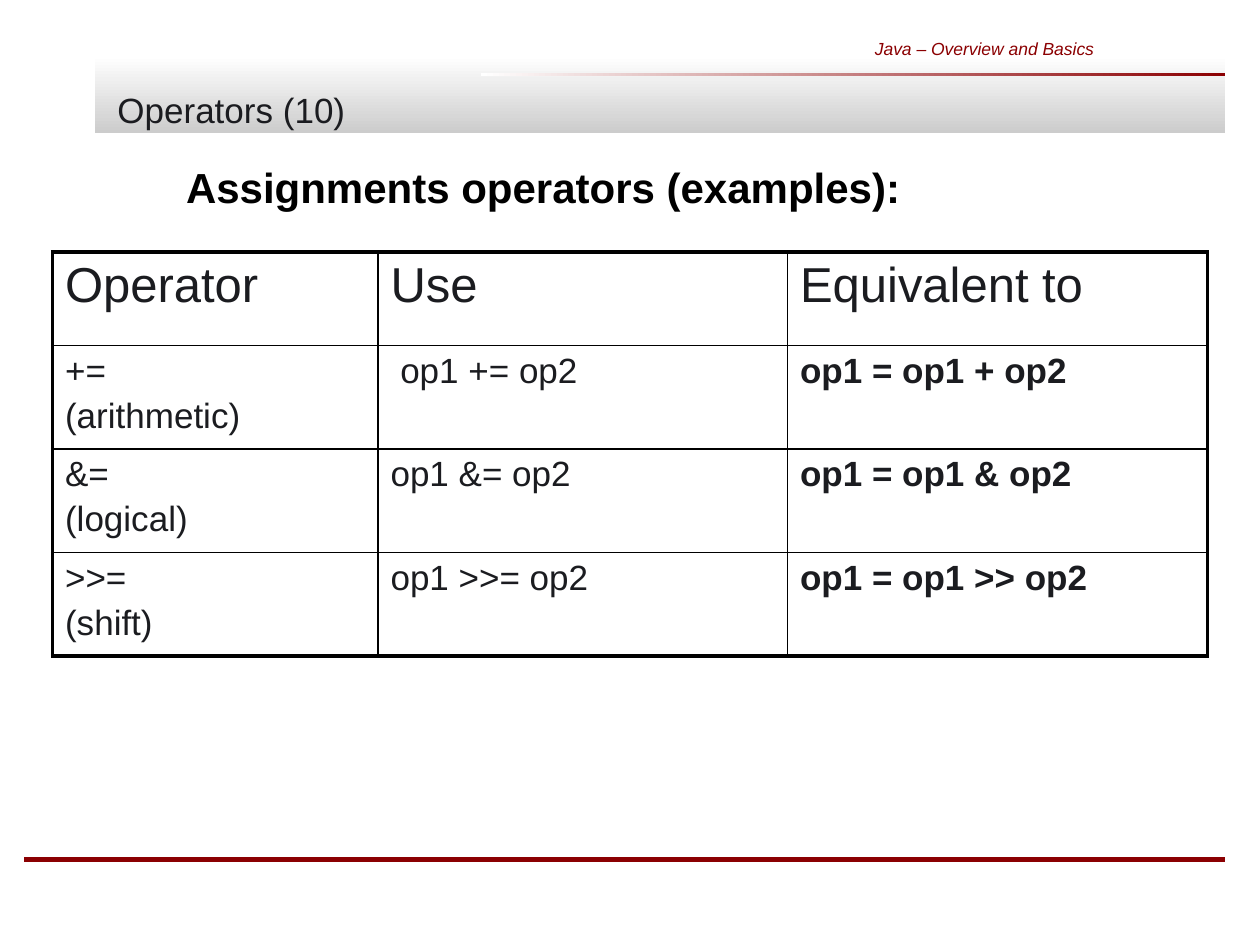
import pptx
import pptx.dml.color
import pptx.enum.shapes
import pptx.enum.text
import pptx.oxml
import pptx.oxml.ns
import pptx.util

Pt = pptx.util.Pt
RGBColor = pptx.dml.color.RGBColor
Align = pptx.enum.text.PP_ALIGN
Anchor = pptx.enum.text.MSO_ANCHOR

WHITE = RGBColor(0xFF, 0xFF, 0xFF)
SILVER = RGBColor(0xCC, 0xCC, 0xCC)
MAROON = RGBColor(0x8B, 0x00, 0x02)
INK = RGBColor(0x1B, 0x1C, 0x20)
BLACK = RGBColor(0, 0, 0)

OPERATORS = [
    ("Operator", "Use", "Equivalent to"),
    ("+=\n(arithmetic)", " op1 += op2", "op1 = op1 + op2"),
    ("&=\n(logical)", "op1 &= op2", "op1 = op1 & op2"),
    (">>=\n(shift)", "op1 >>= op2", "op1 = op1 >> op2"),
]
COLUMN_WIDTHS = (186, 234, 240)
HEADER_HEIGHT = 53.3
BODY_HEIGHT = 59.2
OUTER_BORDER = 2.25
INNER_BORDER = 1


def write_text(frame, text, size=20, color=INK, bold=False, italic=False,
               align=Align.LEFT, anchor=Anchor.TOP, gap=0, shadow=False):
    frame.word_wrap = True
    frame.vertical_anchor = anchor
    for index, line in enumerate(text.split("\n")):
        paragraph = frame.paragraphs[0] if index == 0 else frame.add_paragraph()
        paragraph.alignment = align
        if index:
            paragraph.space_before = Pt(gap)
        run = paragraph.add_run()
        run.text = line
        font = run.font
        font.name = "Arial"
        font.size = Pt(size)
        font.bold = bold
        font.italic = italic
        font.color.rgb = color
        if shadow:
            fill = run._r.rPr.find(pptx.oxml.ns.qn("a:solidFill"))
            fill.addnext(pptx.oxml.parse_xml(
                f'<a:effectLst {pptx.oxml.ns.nsdecls("a")}>'
                '<a:outerShdw dist="35921" dir="2700000" algn="ctr">'
                f'<a:srgbClr val="{WHITE}"/></a:outerShdw></a:effectLst>'))


def add_label(slide, left, top, width, height, text, **style):
    label = slide.shapes.add_textbox(Pt(left), Pt(top), Pt(width), Pt(height))
    write_text(label.text_frame, text, **style)


def add_gradient_bar(slide, left, top, width, height, end_color, angle):
    bar = slide.shapes.add_shape(pptx.enum.shapes.MSO_SHAPE.RECTANGLE,
                                 Pt(left), Pt(top), Pt(width), Pt(height))
    bar.shadow.inherit = False
    bar.line.fill.background()
    bar.fill.gradient()
    bar.fill.gradient_angle = angle
    for stop, color in zip(bar.fill.gradient_stops, (WHITE, end_color)):
        stop.color.rgb = color


def add_header(slide, left, top, width, height):
    add_gradient_bar(slide, left, top, width, height, SILVER, 270)
    add_gradient_bar(slide, left + 221, top + 10, width - 221, 1.6, MAROON, 0)
    add_label(slide, left + 368.6, top - 18, 209.5, 28, "Java – Overview and Basics",
              size=10, color=MAROON, italic=True, align=Align.RIGHT, anchor=Anchor.MIDDLE)
    add_label(slide, left + 6, top - 13.7, 660, 59.8, "Operators (10)",
              anchor=Anchor.BOTTOM, shadow=True)


def add_footer_rule(slide, left, top, width):
    rule = slide.shapes.add_connector(pptx.enum.shapes.MSO_CONNECTOR.STRAIGHT,
                                      Pt(left), Pt(top), Pt(left + width), Pt(top))
    rule.line.color.rgb = MAROON
    rule.line.width = Pt(3)
    rule._element.spPr.append(
        pptx.oxml.parse_xml(f'<a:effectLst {pptx.oxml.ns.nsdecls("a")}/>'))


def set_borders(cell, outer_sides):
    properties = cell._tc.get_or_add_tcPr()
    for index, side in enumerate("LRTB"):
        weight = OUTER_BORDER if side in outer_sides else INNER_BORDER
        properties.insert(index, pptx.oxml.parse_xml(
            f'<a:ln{side} {pptx.oxml.ns.nsdecls("a")} w="{Pt(weight)}">'
            f'<a:solidFill><a:srgbClr val="{BLACK}"/></a:solidFill></a:ln{side}>'))


def add_operator_table(slide, left, top):
    heights = [HEADER_HEIGHT] + [BODY_HEIGHT] * (len(OPERATORS) - 1)
    table = slide.shapes.add_table(len(heights), len(COLUMN_WIDTHS), Pt(left), Pt(top),
                                   Pt(sum(COLUMN_WIDTHS)), Pt(sum(heights))).table
    table.first_row = False
    table.horz_banding = False
    for column, width in zip(table.columns, COLUMN_WIDTHS):
        column.width = Pt(width)
    last_row, last_column = len(heights) - 1, len(COLUMN_WIDTHS) - 1
    for row, texts in enumerate(OPERATORS):
        table.rows[row].height = Pt(heights[row])
        for column, text in enumerate(texts):
            cell = table.cell(row, column)
            cell.fill.background()
            write_text(cell.text_frame, text, size=20 if row else 28,
                       bold=row > 0 and column == last_column, gap=3.5)
            edges = {"L": column == 0, "R": column == last_column,
                     "T": row == 0, "B": row == last_row}
            set_borders(cell, [side for side, is_outer in edges.items() if is_outer])


def main():
    presentation = pptx.Presentation()
    presentation.slide_width = Pt(720)
    presentation.slide_height = Pt(540)
    slide = presentation.slides.add_slide(presentation.slide_layouts[6])
    add_header(slide, 54, 32, 646, 44)
    add_footer_rule(slide, 14, 491, 686)
    add_label(slide, 99.2, 89, 702, 113.8, "Assignments operators (examples):",
              size=24, color=BLACK, bold=True)
    add_operator_table(slide, 30, 144)
    presentation.save("out.pptx")


if __name__ == "__main__":
    main()
